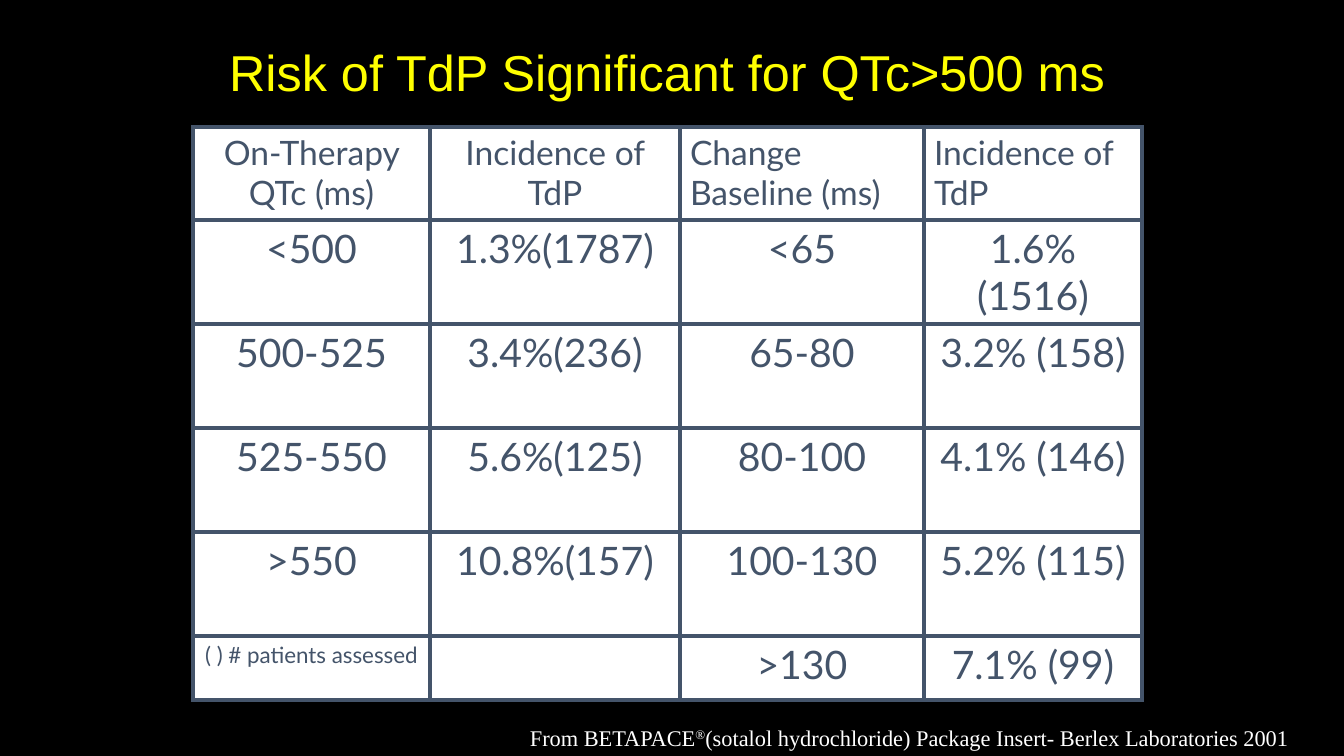
from dataclasses import dataclass

import lxml.etree
import pptx
import pptx.dml.color
import pptx.enum.text
import pptx.oxml.ns
import pptx.util

TITLE = "Risk of TdP Significant for QTc>500 ms"
HEADINGS = ["On-Therapy QTc (ms)", "Incidence of TdP", "Change Baseline (ms)", "Incidence of TdP"]
RISKS = [
    ["<500", "1.3%(1787)", "<65", "1.6% (1516)"],
    ["500-525", "3.4%(236)", "65-80", "3.2% (158)"],
    ["525-550", "5.6%(125)", "80-100", "4.1% (146)"],
    [">550", "10.8%(157)", "100-130", "5.2% (115)"],
    ["( ) # patients assessed", "", ">130", "7.1% (99)"],
]
CITATION = [
    ("From BETAPACE", False),
    ("®", True),
    ("(sotalol hydrochloride) Package Insert- Berlex Laboratories 2001", False),
]

SLIDE_SIZE = (1344, 756)
TITLE_BOX = (219, 25, 899, 101)
TABLE_CORNER = (193, 127)
COLUMN_WIDTHS = [237, 250, 244, 218]
ROW_HEIGHTS = [93, 104, 104, 104, 104, 64]
CITATION_BOX = (520, 719, 788, 37)
EMU_PER_PX = 914400 / 100.8


@dataclass(frozen=True)
class Theme:
    background: str = "000000"
    title: str = "FFFF00"
    ink: str = "44546A"
    paper: str = "FFFFFF"
    title_font: str = "Arial"
    table_font: str = "Lato"
    citation_font: str = "Times New Roman"
    title_size: int = 36
    heading_size: int = 24
    value_size: int = 28
    small_size: int = 16
    border: int = 3


THEME = Theme()
ALIGN = pptx.enum.text.PP_ALIGN


def px(length):
    return pptx.util.Emu(round(length * EMU_PER_PX))


def rgb(value):
    return pptx.dml.color.RGBColor.from_string(value)


def add_run(paragraph, text, font, size, color):
    run = paragraph.add_run()
    run.text = text
    run.font.name = font
    run.font.size = pptx.util.Pt(size)
    run.font.color.rgb = rgb(color)
    return run


def style_cell(cell):
    properties = cell._tc.get_or_add_tcPr()
    for side in ("lnL", "lnR", "lnT", "lnB"):
        line = lxml.etree.SubElement(
            properties, pptx.oxml.ns.qn(f"a:{side}"), w=str(pptx.util.Pt(THEME.border))
        )
        fill = lxml.etree.SubElement(line, pptx.oxml.ns.qn("a:solidFill"))
        lxml.etree.SubElement(fill, pptx.oxml.ns.qn("a:srgbClr"), val=THEME.ink)
    cell.fill.solid()
    cell.fill.fore_color.rgb = rgb(THEME.paper)


def add_title(slide):
    title = slide.shapes.title
    title.left, title.top, title.width, title.height = map(px, TITLE_BOX)
    title.text_frame.vertical_anchor = pptx.enum.text.MSO_ANCHOR.MIDDLE
    paragraph = title.text_frame.paragraphs[0]
    paragraph.alignment = ALIGN.LEFT
    paragraph.line_spacing = 0.9
    add_run(paragraph, TITLE, THEME.title_font, THEME.title_size, THEME.title)


def add_risk_table(slide):
    rows = [HEADINGS] + RISKS
    corner = map(px, TABLE_CORNER)
    size = px(sum(COLUMN_WIDTHS)), px(sum(ROW_HEIGHTS))
    table = slide.shapes.add_table(len(rows), len(HEADINGS), *corner, *size).table
    for column, width in zip(table.columns, COLUMN_WIDTHS):
        column.width = px(width)
    for row, height in zip(table.rows, ROW_HEIGHTS):
        row.height = px(height)
    for r, texts in enumerate(rows):
        for c, text in enumerate(texts):
            cell = table.cell(r, c)
            style_cell(cell)
            if not text:
                continue
            paragraph = cell.text_frame.paragraphs[0]
            paragraph.alignment = ALIGN.LEFT if r == 0 and c >= 2 else ALIGN.CENTER
            if r == 0:
                size = THEME.heading_size
            elif text.startswith("("):
                size = THEME.small_size
            else:
                size = THEME.value_size
            add_run(paragraph, text, THEME.table_font, size, THEME.ink)


def add_citation(slide):
    frame = slide.shapes.add_textbox(*map(px, CITATION_BOX)).text_frame
    frame.word_wrap = False
    frame.auto_size = pptx.enum.text.MSO_AUTO_SIZE.SHAPE_TO_FIT_TEXT
    for text, raised in CITATION:
        run = add_run(
            frame.paragraphs[0], text, THEME.citation_font, THEME.small_size, THEME.paper
        )
        if raised:
            run.font._element.set("baseline", "30000")


def main():
    deck = pptx.Presentation()
    deck.slide_width, deck.slide_height = map(px, SLIDE_SIZE)
    slide = deck.slides.add_slide(deck.slide_layouts[5])
    slide.background.fill.solid()
    slide.background.fill.fore_color.rgb = rgb(THEME.background)
    add_title(slide)
    add_risk_table(slide)
    add_citation(slide)
    deck.save("out.pptx")


if __name__ == "__main__":
    main()
